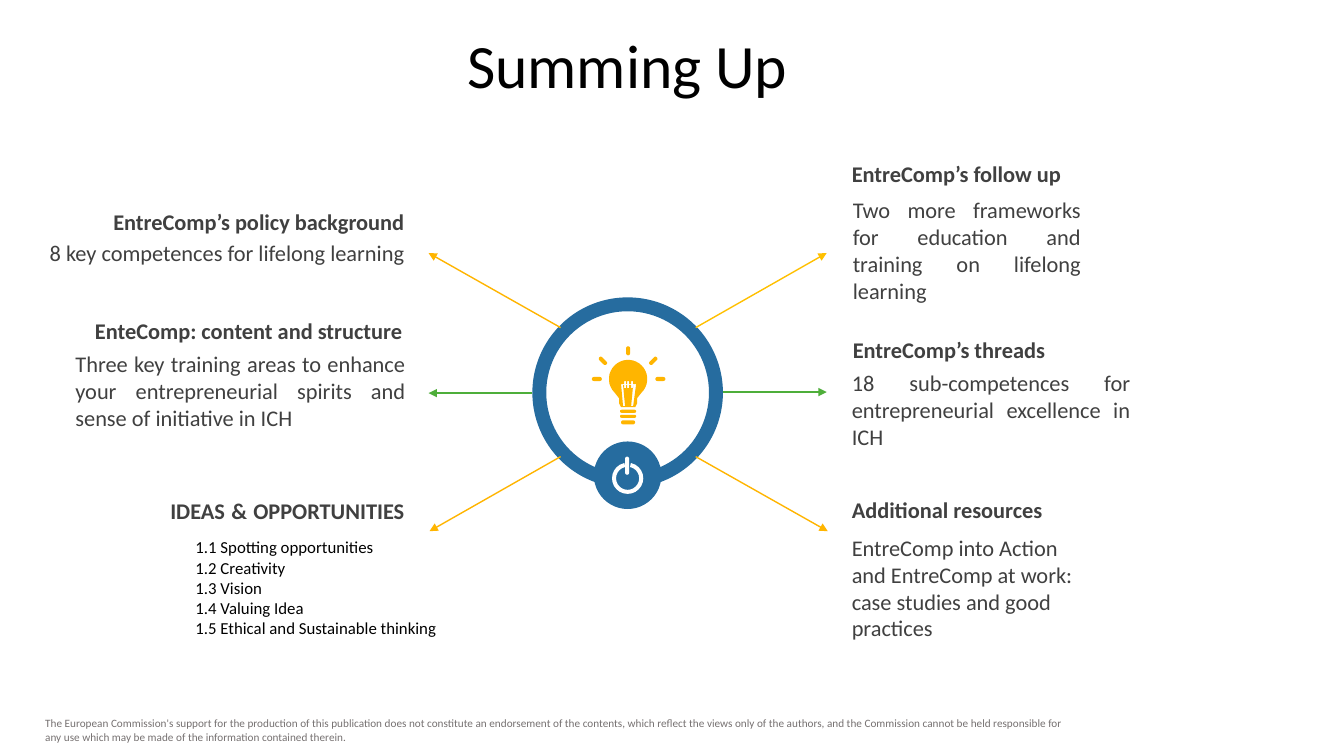
import math
import pptx
import pptx.util
import pptx.dml.color
import pptx.enum.shapes
import pptx.enum.text
from pptx.oxml.ns import qn
from lxml import etree

Inches = pptx.util.Inches
Kind = pptx.enum.shapes.MSO_SHAPE
Align = pptx.enum.text.PP_ALIGN
Anchor = pptx.enum.text.MSO_ANCHOR
left, right, both = Align.LEFT, Align.RIGHT, Align.JUSTIFY

tints = {"blue": "266C9F", "gold": "FFB500", "amber": "FFC000", "green": "4EAE3A",
         "white": "FFFFFF", "black": "000000", "dark": "404040", "gray": "767171"}
rgb = {name: pptx.dml.color.RGBColor.from_string(code) for name, code in tints.items()}

deck = pptx.Presentation()
deck.slide_width, deck.slide_height = Inches(13.33), Inches(7.5)
slide = deck.slides.add_slide(deck.slide_layouts[6])


def add_text(box, lines, size, tint, align=left, bold=False, anchor=Anchor.MIDDLE):
    frame = slide.shapes.add_textbox(*map(Inches, box)).text_frame
    frame.word_wrap = True
    frame.vertical_anchor = anchor
    frame.text = lines
    for para in frame.paragraphs:
        para.alignment = align
        for run in para.runs:
            run.font.name = "Calibri"
            run.font.size = pptx.util.Pt(size)
            run.font.bold = bold
            run.font.color.rgb = rgb[tint]
    return frame


def paint(form, tint):
    form.shadow.inherit = False
    form.fill.solid()
    form.fill.fore_color.rgb = rgb[tint]
    form.line.fill.background()


add_text((0.35, 7.06, 10.46, 0.37),
         "The European Commission's support for the production of this publication does not "
         "constitute an endorsement of the contents, which reflect the views only of the authors, "
         "and the Commission cannot be held responsible for any use which may be made of the "
         "information contained therein.", 8, "gray", anchor=Anchor.TOP)
title = add_text((2.86, 0.3, 6.73, 0.79), "Summing Up", 44, "black", Align.CENTER,
                 anchor=Anchor.TOP)
title.paragraphs[0].line_spacing = 0.9

forms = [
    (Kind.DONUT, (5.28, 2.95, 1.89, 1.89), "blue", [0.073]),
    (Kind.OVAL, (5.89, 4.38, 0.67, 0.67), "blue", []),
    (Kind.BLOCK_ARC, (6.07, 4.59, 0.31, 0.31), "white", [169.2, 154.8, 0.13]),
    (Kind.ROUNDED_RECTANGLE, (6.2, 4.53, 0.04, 0.18), "white", [0.5]),
]
for kind, box, tint, values in forms:
    form = slide.shapes.add_shape(kind, *map(Inches, box))
    paint(form, tint)
    for i, value in enumerate(values):
        form.adjustments[i] = value

globe = [(6.23 + 0.19 * math.cos(math.radians(a)), 3.76 + 0.19 * math.sin(math.radians(a)))
         for a in range(135, 406, 10)]
neck = [(6.32, 3.95), (6.32, 4), (6.3, 4.04), (6.16, 4.04), (6.14, 4), (6.14, 3.95)]
upper, lower = [], []
for x in (6.19, 6.22, 6.26):
    upper += [(x, 3.81), (x, 3.78), (x + 0.02, 3.78), (x + 0.02, 3.81)]
    lower += [(x, 3.82), (x, 3.85), (x + 0.02, 3.85), (x + 0.02, 3.82)]
wire = [(6.16, 3.81), *upper, (6.31, 3.81), (6.28, 4.03), (6.26, 4.03), (6.28, 3.82),
        *lower[::-1], (6.18, 3.82), (6.2, 4.03), (6.18, 4.03)]
parts = [globe + neck, wire]

bars = [
    (6.23, 4.08, 0.16, 0.03, 0), (6.23, 4.13, 0.16, 0.03, 0), (6.23, 4.19, 0.14, 0.04, 0),
    (5.92, 3.76, 0.1, 0.04, 0), (6.55, 3.76, 0.1, 0.04, 0), (6.23, 3.48, 0.09, 0.04, 90),
    (5.98, 3.58, 0.1, 0.04, 45), (6.48, 3.58, 0.1, 0.04, 135),
]
for x, y, span, thick, turn in bars:
    outline = []
    for end in (0, 180):
        tip = math.radians(turn + end)
        for step in range(-90, 91, 30):
            a = tip + math.radians(step)
            outline.append((x + (span - thick) / 2 * math.cos(tip) + thick / 2 * math.cos(a),
                            y + (span - thick) / 2 * math.sin(tip) + thick / 2 * math.sin(a)))
    parts.append(outline)

pen = slide.shapes.build_freeform(*(v * 1000 for v in parts[0][0]), scale=914.4)
for i, part in enumerate(parts):
    dots = [(x * 1000, y * 1000) for x, y in part]
    if i:
        pen.move_to(*dots[0])
    pen.add_line_segments(dots[1:])
paint(pen.convert_to_shape(), "gold")

arrows = [
    (5.28, 3.9, 4.25, 3.9, "green"), (7.17, 3.89, 8.2, 3.89, "green"),
    (5.56, 3.25, 4.25, 2.51, "gold"), (6.9, 3.25, 8.2, 2.51, "amber"),
    (6.9, 4.53, 8.21, 5.27, "gold"), (5.56, 4.53, 4.26, 5.27, "gold"),
]
for *ends, tint in arrows:
    arrow = slide.shapes.add_connector(pptx.enum.shapes.MSO_CONNECTOR.STRAIGHT,
                                       *map(Inches, ends))
    arrow.line.color.rgb = rgb[tint]
    arrow.line.width = pptx.util.Pt(1)
    etree.SubElement(arrow.line._get_or_add_ln(), qn("a:tailEnd"), type="triangle")
    etree.SubElement(arrow._element.spPr, qn("a:effectLst"))

heads = [
    ((0.76, 2.01, 3.35, 0.37), "EntreComp’s policy background", right),
    ((0.76, 3.09, 3.33, 0.37), "EnteComp: content and structure", right),
    ((1.59, 4.88, 2.52, 0.37), "IDEAS & OPPORTUNITIES ", both),
    ((8.35, 1.54, 2.46, 0.37), "EntreComp’s follow up", left),
    ((8.36, 3.28, 2.96, 0.37), "EntreComp’s threads", left),
    ((8.35, 4.87, 2.46, 0.37), "Additional resources", left),
]
for box, words, align in heads:
    add_text(box, words, 16, "dark", align, bold=True)

notes = [
    ((0.14, 2.32, 3.97, 0.37), "8 key competences for lifelong learning", right),
    ((0.65, 3.42, 3.47, 0.91), "Three key training areas to enhance your entrepreneurial "
     "spirits and sense of initiative in ICH", both),
    ((8.36, 1.89, 2.46, 1.18), "Two more frameworks for education and training on lifelong "
     "learning", both),
    ((8.35, 3.61, 2.96, 0.91), "18 sub-competences for entrepreneurial excellence in ICH", both),
    ((8.35, 5.24, 2.46, 1.18), "EntreComp into Action and EntreComp at work: case studies and "
     "good practices", left),
]
for box, words, align in notes:
    add_text(box, words, 16, "dark", align)

ideas = ["Spotting opportunities", "Creativity", "Vision", "Valuing Idea",
         "Ethical and Sustainable thinking"]
add_text((1.84, 5.28, 2.82, 1.38), "\n".join(f"1.{i} {idea}" for i, idea in enumerate(ideas, 1)),
         12, "black", anchor=Anchor.TOP)

deck.save("out.pptx")
